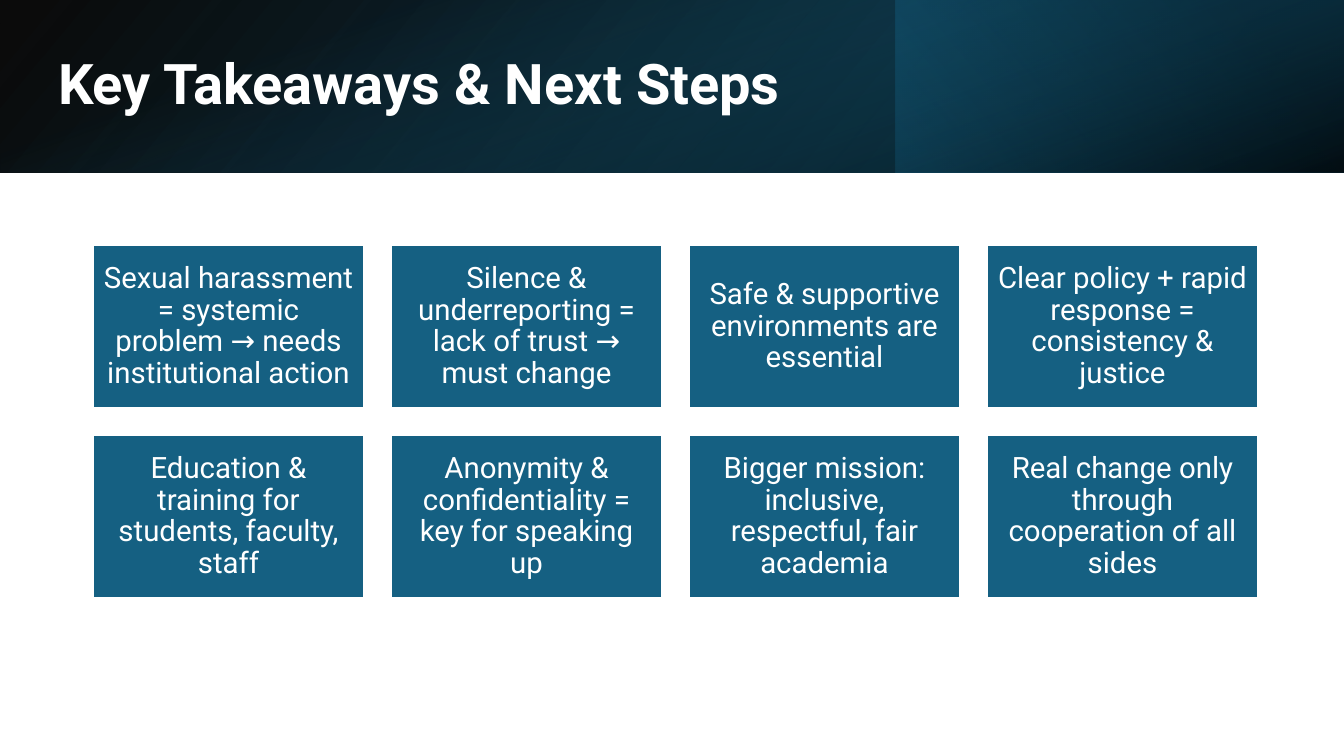
from dataclasses import dataclass

from lxml.etree import SubElement
from pptx import Presentation
from pptx.dml.color import RGBColor
from pptx.enum.shapes import MSO_SHAPE
from pptx.enum.text import MSO_ANCHOR, PP_ALIGN
from pptx.oxml.ns import qn
from pptx.util import Emu, Pt

EMU_PER_PX = 914400 / 100.8
SLIDE_WIDTH, SLIDE_HEIGHT = 1344, 756
BAND_HEIGHT = 173

CARD_COLUMNS = 4
CARD_LEFT, CARD_TOP = 93, 245
CARD_WIDTH, CARD_HEIGHT = 271, 163
CARD_STEP_X, CARD_STEP_Y = 298, 190
CARD_INSET = 9

TAKEAWAYS = [
    "Sexual harassment = systemic problem → needs institutional action",
    "Silence & underreporting = lack of trust → must change",
    "Safe & supportive environments are essential",
    "Clear policy + rapid response = consistency & justice",
    "Education & training for students, faculty, staff",
    "Anonymity & confidentiality = key for speaking up",
    "Bigger mission: inclusive, respectful, fair academia",
    "Real change only through cooperation of all sides",
]


@dataclass(frozen=True)
class Theme:
    font: str = "Roboto"
    title_size: int = 40
    card_size: int = 21
    line_spacing: float = 0.9
    white: str = "FFFFFF"
    black: str = "000000"
    teal: str = "156082"
    deep_teal: str = "104862"
    dark_teal: str = "0B3041"


THEME = Theme()


def px(length):
    return Emu(round(length * EMU_PER_PX))


def color(value):
    return RGBColor.from_string(value)


def add_rectangle(slide, left, top, width, height):
    shape = slide.shapes.add_shape(
        MSO_SHAPE.RECTANGLE, px(left), px(top), px(width), px(height))
    shape.shadow.inherit = False
    return shape


def set_gradient(shape, stops, angle):
    """Fill with (position %, colour, opacity %) stops, angle clockwise."""
    properties = shape.element.spPr
    gradient = SubElement(properties, qn("a:gradFill"), rotWithShape="1")
    properties.find(qn("a:prstGeom")).addnext(gradient)
    stop_list = SubElement(gradient, qn("a:gsLst"))
    for position, value, opacity in stops:
        stop = SubElement(stop_list, qn("a:gs"), pos=str(position * 1000))
        stop_color = SubElement(stop, qn("a:srgbClr"), val=value)
        SubElement(stop_color, qn("a:alpha"), val=str(opacity * 1000))
    SubElement(gradient, qn("a:lin"), ang=str(angle * 60000), scaled="0")


def add_gradient_panel(slide, box, stops, angle, rotation=0, flipped=False):
    panel = add_rectangle(slide, *box)
    panel.line.fill.background()
    panel.rotation = rotation
    if flipped:
        panel.element.spPr.xfrm.set("flipH", "1")
    set_gradient(panel, stops, angle)


def add_header_band(slide):
    add_gradient_panel(
        slide, (0, 0, SLIDE_WIDTH, BAND_HEIGHT),
        [(0, THEME.black, 96), (100, THEME.deep_teal, 100)],
        angle=140, flipped=True)
    add_gradient_panel(
        slide, (896, 0, 448, BAND_HEIGHT),
        [(19, THEME.dark_teal, 68), (100, THEME.teal, 79)],
        angle=320, rotation=180)
    offset = (SLIDE_WIDTH - BAND_HEIGHT) / 2
    add_gradient_panel(
        slide, (offset, -offset, BAND_HEIGHT, SLIDE_WIDTH),
        [(23, THEME.teal, 0), (99, THEME.black, 74)],
        angle=340, rotation=90)


def write_text(frame, text, size, alignment, bold=False):
    frame.word_wrap = True
    frame.vertical_anchor = MSO_ANCHOR.MIDDLE
    paragraph = frame.paragraphs[0]
    paragraph.text = text
    paragraph.alignment = alignment
    paragraph.line_spacing = THEME.line_spacing
    font = paragraph.font
    font.name = THEME.font
    font.size = Pt(size)
    font.bold = bold
    font.color.rgb = color(THEME.white)


def place_title(slide, text):
    """Set the title and bring it in front of the header band."""
    title = slide.shapes.title
    title.left, title.top = px(48), px(38)
    title.width, title.height = px(1210), px(97)
    write_text(title.text_frame, text, THEME.title_size, PP_ALIGN.LEFT, bold=True)
    title.element.getparent().append(title.element)


def add_card(slide, index, text):
    row, column = divmod(index, CARD_COLUMNS)
    card = add_rectangle(
        slide, CARD_LEFT + column * CARD_STEP_X, CARD_TOP + row * CARD_STEP_Y,
        CARD_WIDTH, CARD_HEIGHT)
    card.fill.solid()
    card.fill.fore_color.rgb = color(THEME.teal)
    card.line.color.rgb = color(THEME.white)
    card.line.width = Pt(1.5)
    frame = card.text_frame
    frame.margin_left = frame.margin_right = px(CARD_INSET)
    frame.margin_top = frame.margin_bottom = px(CARD_INSET)
    write_text(frame, text, THEME.card_size, PP_ALIGN.CENTER)


def main():
    presentation = Presentation()
    presentation.slide_width = px(SLIDE_WIDTH)
    presentation.slide_height = px(SLIDE_HEIGHT)
    slide = presentation.slides.add_slide(presentation.slide_layouts[5])
    add_header_band(slide)
    place_title(slide, "Key Takeaways & Next Steps")
    for index, text in enumerate(TAKEAWAYS):
        add_card(slide, index, text)
    presentation.save("out.pptx")


if __name__ == "__main__":
    main()
